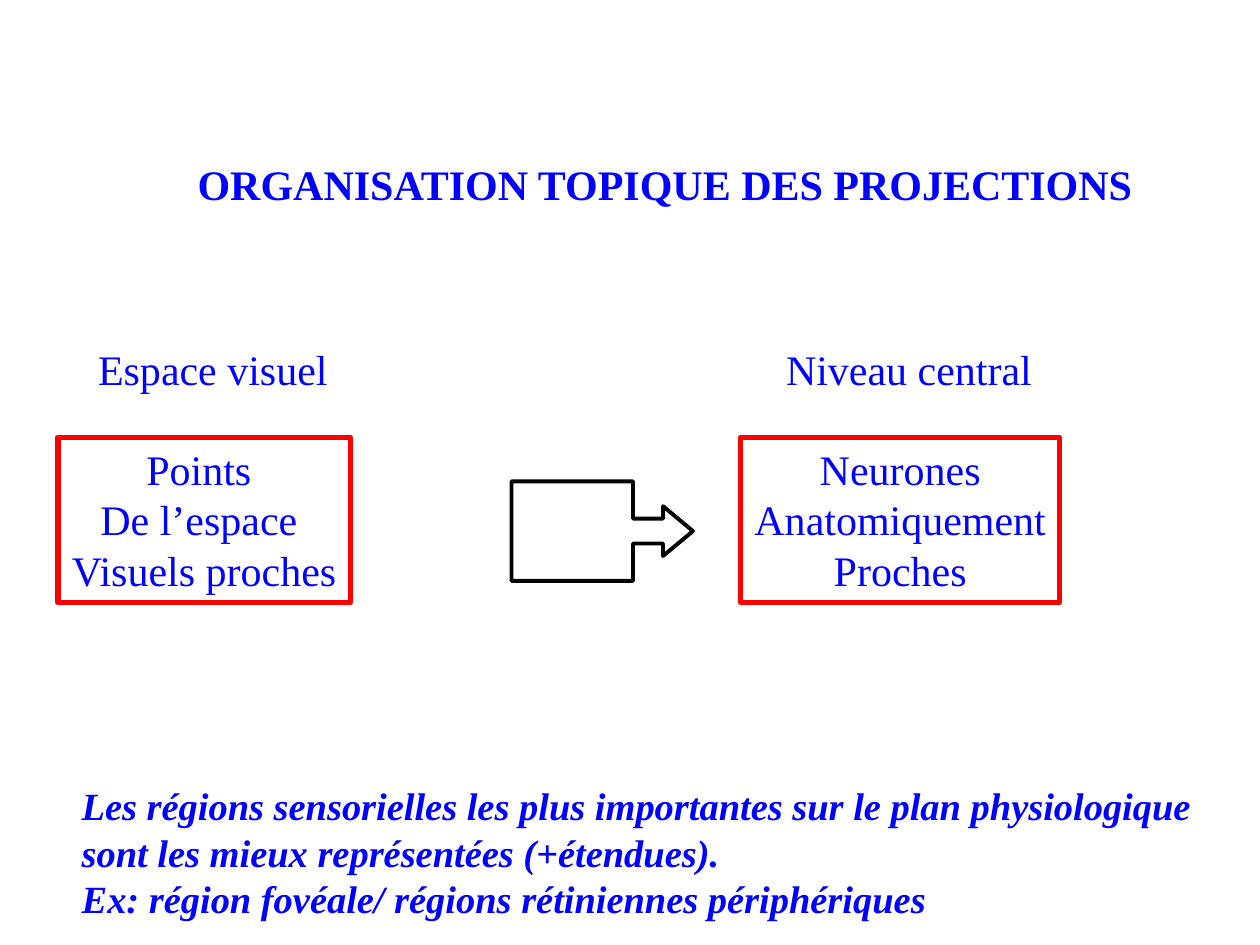
from pptx import Presentation
from pptx.dml.color import RGBColor
from pptx.enum.shapes import MSO_SHAPE as Shape
from pptx.enum.text import MSO_AUTO_SIZE as AutoSize, PP_ALIGN as Align
from pptx.util import Inches, Pt

BLUE = RGBColor(0x00, 0x00, 0xFF)
RED = RGBColor(0xFF, 0x00, 0x00)
BLACK = RGBColor(0x00, 0x00, 0x00)

prs = Presentation()
prs.slide_width, prs.slide_height = Inches(10), Inches(7.5)
slide = prs.slides.add_slide(prs.slide_layouts[6])


def add_text(left, top, width, height, lines, size=24, bold=False,
             italic=False, align=Align.LEFT):
    box = slide.shapes.add_textbox(Inches(left), Inches(top),
                                   Inches(width), Inches(height))
    frame = box.text_frame
    frame.word_wrap = False
    frame.auto_size = AutoSize.SHAPE_TO_FIT_TEXT
    for i, line in enumerate(lines):
        paragraph = frame.paragraphs[0] if i == 0 else frame.add_paragraph()
        paragraph.alignment = align
        run = paragraph.add_run()
        run.text = line
        run.font.name = "Times New Roman"
        run.font.size = Pt(size)
        run.font.bold = bold
        run.font.italic = italic
        run.font.color.rgb = BLUE
    return box


# Title
add_text(1.47, 1.21, 7.7, 0.5, ["ORGANISATION TOPIQUE DES PROJECTIONS"], bold=True)

# Framed statements: visual space on the left, central level on the right
for left, width, lines in [
    (0.46, 2.32, ["Points ", "De l’espace ", "Visuels proches"]),
    (5.88, 2.53, ["Neurones", "Anatomiquement", "Proches"]),
]:
    frame_box = add_text(left, 3.47, width, 1.31, lines, align=Align.CENTER)
    frame_box.line.color.rgb = RED
    frame_box.line.width = Pt(3)

# Arrow from visual space to central level
arrow = slide.shapes.add_shape(Shape.RIGHT_ARROW_CALLOUT, Inches(4.06),
                               Inches(3.82), Inches(1.44), Inches(0.79))
arrow.shadow.inherit = False
arrow.fill.background()
arrow.line.color.rgb = BLACK
arrow.line.width = Pt(2.25)
for i, value in enumerate([0.25, 0.25, 0.3, 0.67]):
    arrow.adjustments[i] = value

# Headings above the frames
add_text(6.14, 2.68, 2.17, 0.51, ["Niveau central"])
add_text(0.68, 2.68, 2.04, 0.51, ["Espace visuel"])

# Conclusion
add_text(0.55, 6.16, 9.1, 1.21, [
    "Les régions sensorielles les plus importantes sur le plan physiologique",
    "sont les mieux représentées (+étendues).",
    "Ex: région fovéale/ régions rétiniennes périphériques",
], size=22, bold=True, italic=True)

prs.save("out.pptx")
